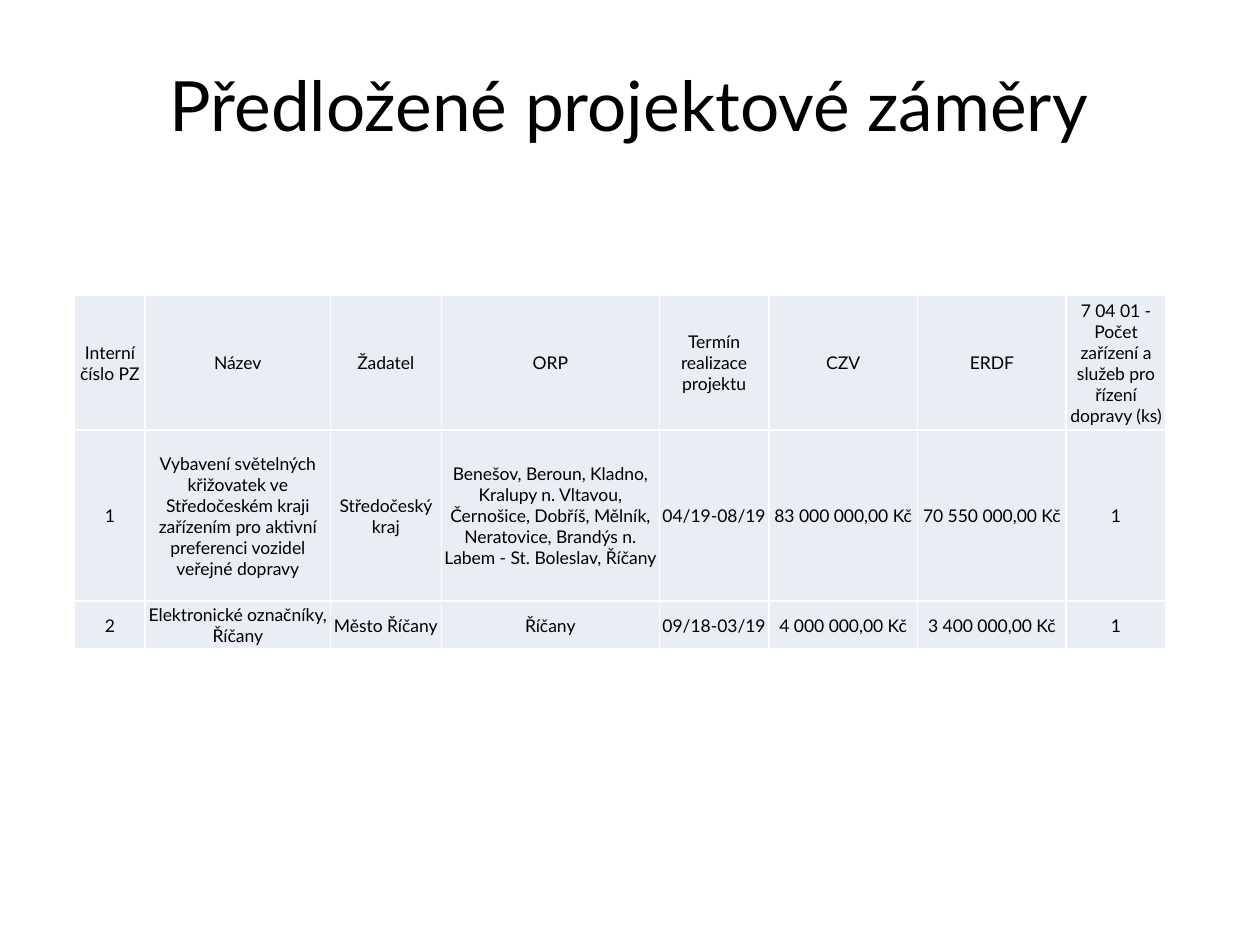
from lxml.etree import SubElement
from pptx import Presentation
from pptx.dml.color import RGBColor
from pptx.enum.text import MSO_ANCHOR, PP_ALIGN
from pptx.oxml.ns import qn
from pptx.util import Pt

FONT = "Lato"
BLACK, WHITE, CELL_FILL = "000000", "FFFFFF", "E9EDF4"
COL_WIDTHS = [40.3, 105.8, 63.4, 124.6, 62.6, 85, 85, 56.9]
ROW_HEIGHTS = [77, 97.9, 27.4]
ROWS = [
    ["Interní číslo PZ", "Název", "Žadatel", "ORP", "Termín realizace projektu",
     "CZV", "ERDF", "7 04 01 - Počet zařízení a služeb pro řízení dopravy (ks)"],
    ["1",
     "Vybavení světelných křižovatek ve Středočeském kraji zařízením "
     "pro aktivní preferenci vozidel veřejné dopravy",
     "Středočeský kraj",
     "Benešov, Beroun, Kladno, Kralupy n. Vltavou, Černošice, Dobříš, Mělník, "
     "Neratovice, Brandýs n. Labem - St. Boleslav, Říčany",
     "04/19-08/19", "83 000 000,00 Kč", "70 550 000,00 Kč", "1"],
    ["2", "Elektronické označníky, Říčany", "Město Říčany", "Říčany",
     "09/18-03/19", "4 000 000,00 Kč", "3 400 000,00 Kč", "1"],
]


def color(hex_string):
    return RGBColor.from_string(hex_string)


def write_text(tf, text, size):
    p = tf.paragraphs[0]
    p.alignment = PP_ALIGN.CENTER
    r = p.add_run()
    r.text = text
    r.font.name = FONT
    r.font.size = Pt(size)
    r.font.color.rgb = color(BLACK)


def add_title(s, text):
    sp = s.shapes.title
    sp.left, sp.top, sp.width, sp.height = Pt(35.3), Pt(37.4), Pt(648), Pt(43.9)
    tf = sp.text_frame
    tf.word_wrap = True
    tf.vertical_anchor = MSO_ANCHOR.MIDDLE
    write_text(tf, text, 39.6)


def set_borders(cell, hex_string, width):
    """Line all four sides; the schema wants the lines ahead of the fill."""
    tcPr = cell._tc.get_or_add_tcPr()
    for i, side in enumerate(("a:lnL", "a:lnR", "a:lnT", "a:lnB")):
        ln = SubElement(tcPr, qn(side), w=str(Pt(width)))
        fill = SubElement(ln, qn("a:solidFill"))
        SubElement(fill, qn("a:srgbClr"), val=hex_string)
        tcPr.insert(i, ln)


def format_cell(cell, text):
    cell.margin_left = cell.margin_right = cell.margin_top = Pt(0.7)
    cell.margin_bottom = Pt(0)
    cell.vertical_anchor = MSO_ANCHOR.MIDDLE
    cell.fill.solid()
    cell.fill.fore_color.rgb = color(CELL_FILL)
    set_borders(cell, WHITE, 1)
    write_text(cell.text_frame, text, 10)


def add_project_table(s):
    frame = s.shapes.add_table(len(ROWS), len(COL_WIDTHS), Pt(42.7), Pt(168.6),
                               Pt(sum(COL_WIDTHS)), Pt(sum(ROW_HEIGHTS)))
    table = frame.table
    for column, width in zip(table.columns, COL_WIDTHS):
        column.width = Pt(width)
    for row, height, texts in zip(table.rows, ROW_HEIGHTS, ROWS):
        row.height = Pt(height)
        for cell, text in zip(row.cells, texts):
            format_cell(cell, text)


def main():
    prs = Presentation()
    prs.slide_width, prs.slide_height = Pt(720), Pt(540)
    s = prs.slides.add_slide(prs.slide_layouts[5])
    add_title(s, "Předložené projektové záměry")
    add_project_table(s)
    prs.save("out.pptx")


if __name__ == "__main__":
    main()
